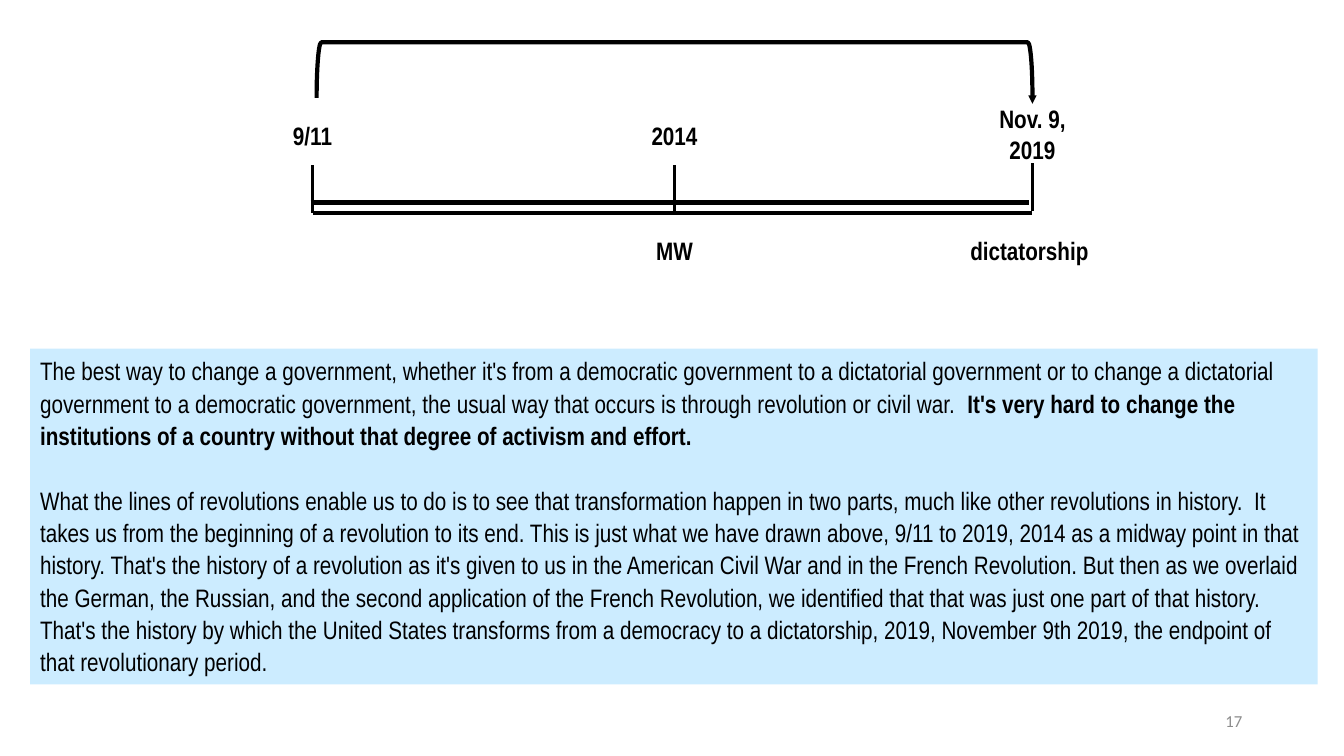
from dataclasses import dataclass

from lxml import etree
from pptx import Presentation
from pptx.dml.color import RGBColor
from pptx.enum.shapes import MSO_CONNECTOR, MSO_SHAPE
from pptx.enum.text import MSO_ANCHOR, MSO_AUTO_SIZE, PP_ALIGN
from pptx.oxml.ns import qn
from pptx.util import Inches, Pt

STRAIGHT = MSO_CONNECTOR.STRAIGHT
RECTANGLE, LEFT_BRACKET = MSO_SHAPE.RECTANGLE, MSO_SHAPE.LEFT_BRACKET
TOP, MIDDLE = MSO_ANCHOR.TOP, MSO_ANCHOR.MIDDLE
GROW = MSO_AUTO_SIZE.SHAPE_TO_FIT_TEXT
LEFT, CENTER, RIGHT = PP_ALIGN.LEFT, PP_ALIGN.CENTER, PP_ALIGN.RIGHT


@dataclass(frozen=True)
class Theme:
    ink: RGBColor = RGBColor(0x00, 0x00, 0x00)
    panel: RGBColor = RGBColor(0xCC, 0xEC, 0xFF)
    muted: RGBColor = RGBColor(0x8C, 0x8C, 0x8C)
    font: str = "Arial Narrow"
    number_font: str = "Calibri"
    text_size: float = 18
    number_size: float = 12
    axis_width: float = 3
    tick_width: float = 2.25
    arrow_width: float = 0.5


theme = Theme()

prs = Presentation()
prs.slide_width, prs.slide_height = Inches(13.33), Inches(7.5)
slide = prs.slides.add_slide(prs.slide_layouts[6])
shapes = slide.shapes


def add_rule(start, end, width):
    rule = shapes.add_connector(STRAIGHT, *map(Inches, (*start, *end)))
    rule.line.color.rgb = theme.ink
    rule.line.width = Pt(width)
    etree.SubElement(rule._element.spPr, qn("a:effectLst"))
    return rule


def write(frame, paragraphs, align, font=theme.font, size=theme.text_size, color=theme.ink):
    """Fill a frame with paragraphs, each a list of (text, bold) runs."""
    frame.word_wrap = True
    for index, runs in enumerate(paragraphs):
        paragraph = frame.add_paragraph() if index else frame.paragraphs[0]
        paragraph.alignment = align
        for text, bold in runs:
            run = paragraph.add_run()
            run.text = text
            run.font.name, run.font.size, run.font.bold = font, Pt(size), bold
            run.font.color.rgb = color


# Timeline grid: one column per date, rows from top to bottom
START, MIDWAY, END = 3.1, 6.69, 10.24
BRACKET_TOP, BRACKET_DEPTH, BRACKET_SPAN = 0.42, 0.55, 7.1
DATE_ROW, TICK_ROW, AXIS_ROW, EVENT_ROW = 1.14, 1.64, 2.11, 2.29
AXIS_GAP, TICK_LENGTH, LABEL_WIDTH, LABEL_HEIGHT = 0.1, 0.47, 0.97, 0.4

# Double axis
add_rule((START, AXIS_ROW), (END, AXIS_ROW), theme.axis_width)
add_rule((START - 0.02, AXIS_ROW - AXIS_GAP), (END - 0.03, AXIS_ROW - AXIS_GAP), theme.axis_width)

# Ticks
for column, top in ((START, TICK_ROW), (MIDWAY, TICK_ROW), (END, TICK_ROW - 0.02)):
    add_rule((column, top), (column, top + TICK_LENGTH), theme.tick_width)

# Dates above the axis, events below it
labels = (
    (START, DATE_ROW, LABEL_WIDTH, LABEL_HEIGHT, ["9/11"]),
    (MIDWAY, DATE_ROW, LABEL_WIDTH, LABEL_HEIGHT, ["2014"]),
    (END, DATE_ROW - 0.16, LABEL_WIDTH, 0.71, ["Nov. 9,", "2019"]),
    (MIDWAY, EVENT_ROW, LABEL_WIDTH, LABEL_HEIGHT, ["MW"]),
    (END - 0.03, EVENT_ROW, 1.57, LABEL_HEIGHT, ["dictatorship"]),
)
for center, top, width, height, lines in labels:
    label = shapes.add_textbox(*map(Inches, (center - width / 2, top, width, height)))
    write(label.text_frame, [[(line, True)] for line in lines], CENTER)
    label.text_frame.auto_size = GROW

# Bracket spanning the period, turned to open downwards
bracket = shapes.add_shape(
    LEFT_BRACKET,
    Inches(END - BRACKET_SPAN / 2 - BRACKET_DEPTH / 2),
    Inches(BRACKET_TOP + BRACKET_DEPTH / 2 - BRACKET_SPAN / 2),
    Inches(BRACKET_DEPTH),
    Inches(BRACKET_SPAN),
)
bracket.rotation = 90
bracket.shadow.inherit = False
bracket.fill.background()
bracket.line.color.rgb = theme.ink
bracket.line.width = Pt(theme.axis_width)

# Arrowhead at the end of the bracket
arrow = add_rule((END, 0.96), (END, 1.03), theme.arrow_width)
etree.SubElement(arrow.line._get_or_add_ln(), qn("a:tailEnd"), type="triangle")

# Explanation panel
explanation = [
    [
        ("The best way to change a government, whether it's from a democratic government "
         "to a dictatorial government or to change a dictatorial government to a democratic "
         "government, the usual way that occurs is through revolution or civil war.  ", False),
        ("It's very hard to change the institutions of a country without that degree of "
         "activism and effort.", True),
    ],
    [
        ("What the lines of revolutions enable us to do is to see that transformation happen "
         "in two parts, much like other revolutions in history.  It takes us from the "
         "beginning of a revolution to its end. This is just what we have drawn above, 9/11 to "
         "2019, 2014 as a midway point in that history. That's the history of a revolution as "
         "it's given to us in the American Civil War and in the French Revolution. But then as "
         "we overlaid the German, the Russian, and the second application of the French "
         "Revolution, we identified that that was just one part of that history. That's the "
         "history by which the United States transforms from a democracy to a dictatorship, "
         "2019, November 9th 2019, the endpoint of that revolutionary period.", False),
    ],
]
panel = shapes.add_shape(RECTANGLE, *map(Inches, (0.3, 3.46, 12.77, 3.33)))
panel.shadow.inherit = False
panel.fill.solid()
panel.fill.fore_color.rgb = theme.panel
panel.line.fill.background()
panel.text_frame.vertical_anchor = TOP
write(panel.text_frame, explanation, LEFT)
for paragraph in panel.text_frame.paragraphs:
    paragraph.line_spacing = 1.07
panel.text_frame.paragraphs[1].space_before = Pt(23)

# Slide number
number = shapes.add_textbox(*map(Inches, (9.42, 6.95, 3, 0.4)))
number.text_frame.vertical_anchor = MIDDLE
write(number.text_frame, [[("17", False)]], RIGHT,
      theme.number_font, theme.number_size, theme.muted)

prs.save("out.pptx")
